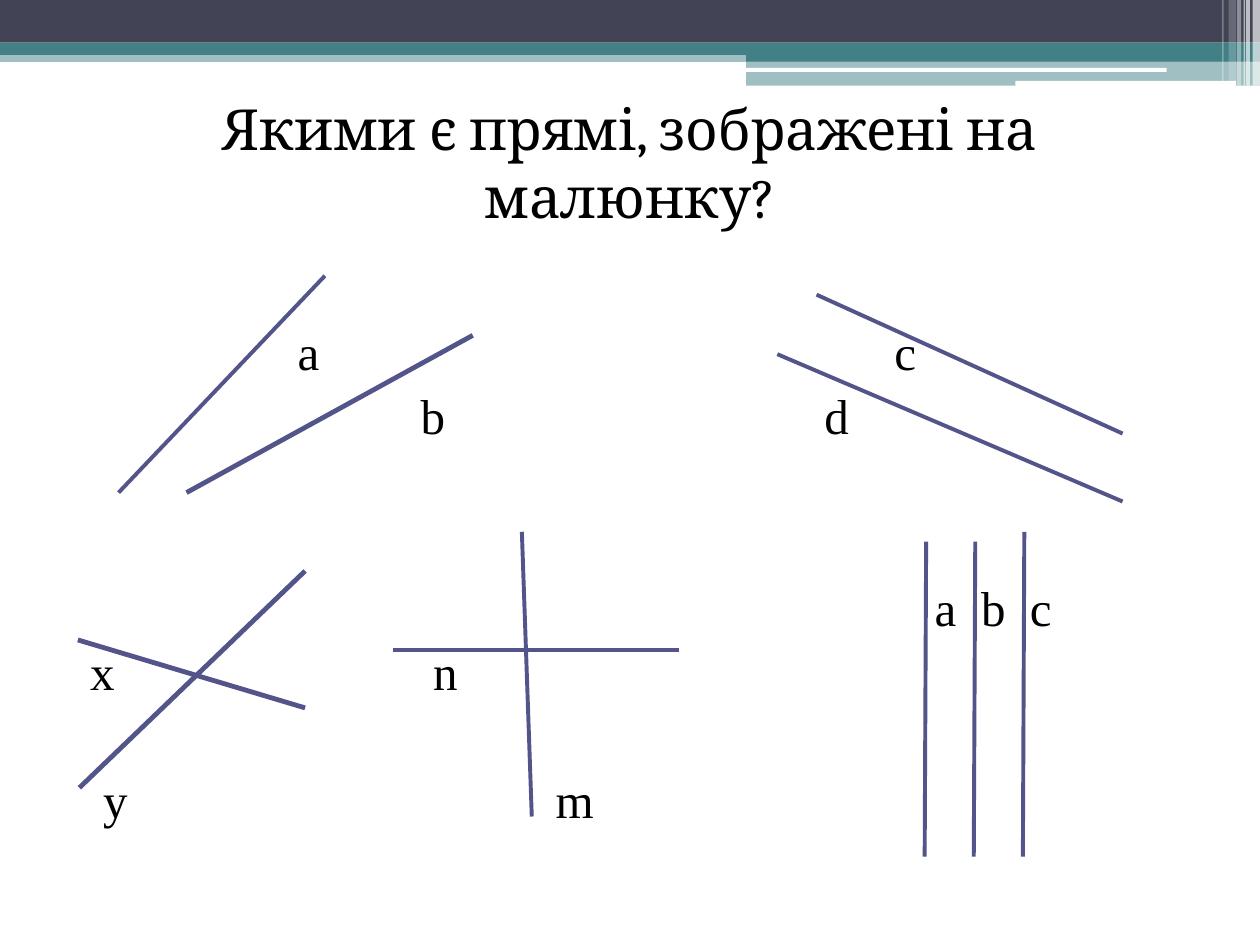
from dataclasses import dataclass

from lxml.etree import SubElement
from pptx import Presentation
from pptx.dml.color import RGBColor
from pptx.enum.shapes import MSO_CONNECTOR, MSO_SHAPE
from pptx.enum.text import MSO_ANCHOR, MSO_AUTO_SIZE, PP_ALIGN
from pptx.oxml.ns import qn
from pptx.slide import Slide
from pptx.text.text import TextFrame
from pptx.util import Cm, Pt


@dataclass(frozen=True)
class Theme:
    navy: str = "424456"
    teal: str = "438086"
    white: str = "FFFFFF"
    ink: str = "000000"
    stroke: str = "53548A"
    title_font: str = "Cambria"
    label_font: str = "Times New Roman"
    title_size: float = 32.4
    title_pitch: float = 38.9
    label_size: float = 28


@dataclass(frozen=True)
class Band:
    left: float
    top: float
    width: float
    height: float
    color: str
    opacity: int = 100
    rounded: bool = False


@dataclass(frozen=True)
class Segment:
    start: tuple[float, float]
    end: tuple[float, float]
    weight: float = 2.25


@dataclass(frozen=True)
class Label:
    text: str
    left: float
    row: int


THEME = Theme()
LABEL_TOP = 6.48
LABEL_PITCH = 1.29

BANDS = [
    Band(0, 1.02, 25.4, 0.23, THEME.teal, 50),
    Band(0, 0, 25.4, 0.86, THEME.navy),
    Band(0, 0.86, 25.4, 0.25, THEME.teal),
    Band(15.04, 0.99, 10.36, 0.25, THEME.teal),
    Band(15.04, 1.22, 10.36, 0.51, THEME.teal, 50),
    Band(15.01, 1.37, 8.51, 0.08, THEME.white, rounded=True),
    Band(20.47, 1.63, 4.45, 0.1, THEME.white, rounded=True),
    Band(25.25, 0, 0.15, 1.73, THEME.white, 65),
    Band(25.12, 0, 0.08, 1.73, THEME.white, 65),
    Band(25.07, 0, 0.03, 1.73, THEME.white, 60),
    Band(24.94, 0, 0.08, 1.73, THEME.white, 40),
    Band(24.77, 0, 0.15, 1.63, THEME.white, 20),
    Band(24.64, 0, 0.03, 1.63, THEME.white, 30),
]

SEGMENTS = [
    Segment((2.39, 9.93), (6.55, 5.56)),
    Segment((9.53, 6.76), (3.76, 9.93), 2.75),
    Segment((16.46, 5.94), (22.63, 8.74)),
    Segment((15.67, 7.14), (22.63, 10.11)),
    Segment((19.66, 10.92), (19.63, 17.27)),
    Segment((20.65, 10.72), (20.62, 17.27)),
    Segment((18.67, 10.92), (18.64, 17.27)),
    Segment((10.52, 10.72), (10.72, 16.46)),
    Segment((7.92, 13.11), (13.69, 13.11)),
    Segment((6.15, 11.51), (1.6, 15.88), 2.75),
    Segment((6.15, 14.27), (1.57, 12.9), 2.75),
]

LABELS = [
    Label("а", 6, 0),
    Label("c", 18.03, 0),
    Label("b", 8.48, 1),
    Label("d", 16.62, 1),
    Label("a", 18.84, 4),
    Label("b", 19.78, 4),
    Label("c", 20.76, 4),
    Label("x", 1.82, 5),
    Label("n", 8.73, 5),
    Label("y", 2.08, 7),
    Label("m", 11.2, 7),
]


def draw_band(page: Slide, band: Band) -> None:
    kind = MSO_SHAPE.ROUNDED_RECTANGLE if band.rounded else MSO_SHAPE.RECTANGLE
    box = page.shapes.add_shape(
        kind, Cm(band.left), Cm(band.top), Cm(band.width), Cm(band.height)
    )
    box.shadow.inherit = False
    box.line.fill.background()
    box.fill.solid()
    box.fill.fore_color.rgb = RGBColor.from_string(band.color)
    if band.opacity < 100:
        color = box.fill._xPr.find(qn("a:solidFill"))[0]
        SubElement(color, qn("a:alpha"), val=str(band.opacity * 1000))


def draw_segment(page: Slide, segment: Segment) -> None:
    points = [Cm(value) for value in (*segment.start, *segment.end)]
    line = page.shapes.add_connector(MSO_CONNECTOR.STRAIGHT, *points)
    line.line.color.rgb = RGBColor.from_string(THEME.stroke)
    line.line.width = Pt(segment.weight)
    SubElement(line._element.spPr, qn("a:effectLst"))


def write_text(frame: TextFrame, text: str, font: str, size: float) -> None:
    frame.text = text
    frame.word_wrap = True
    frame.auto_size = MSO_AUTO_SIZE.NONE
    span = frame.paragraphs[0].runs[0]
    span.font.name = font
    span.font.size = Pt(size)
    span.font.color.rgb = RGBColor.from_string(THEME.ink)


def write_title(page: Slide, text: str) -> None:
    box = page.shapes.title
    box.left, box.top, box.width, box.height = Cm(1.27), Cm(1.96), Cm(22.86), Cm(2.62)
    frame = box.text_frame
    write_text(frame, text, THEME.title_font, THEME.title_size)
    frame.vertical_anchor = MSO_ANCHOR.MIDDLE
    para = frame.paragraphs[0]
    para.alignment = PP_ALIGN.CENTER
    para.line_spacing = Pt(THEME.title_pitch)


def write_label(page: Slide, label: Label) -> None:
    top = LABEL_TOP + label.row * LABEL_PITCH
    box = page.shapes.add_textbox(Cm(label.left), Cm(top), Cm(0.9), Cm(1.2))
    frame = box.text_frame
    frame.margin_left = frame.margin_right = Cm(0)
    frame.margin_top = frame.margin_bottom = Cm(0)
    write_text(frame, label.text, THEME.label_font, THEME.label_size)


def main() -> None:
    deck = Presentation()
    deck.slide_width, deck.slide_height = Cm(25.4), Cm(19.05)
    page = deck.slides.add_slide(deck.slide_layouts[5])
    for band in BANDS:
        draw_band(page, band)
    write_title(page, "Якими є прямі, зображені на малюнку?")
    for label in LABELS:
        write_label(page, label)
    for segment in SEGMENTS:
        draw_segment(page, segment)
    deck.save("out.pptx")


if __name__ == "__main__":
    main()
